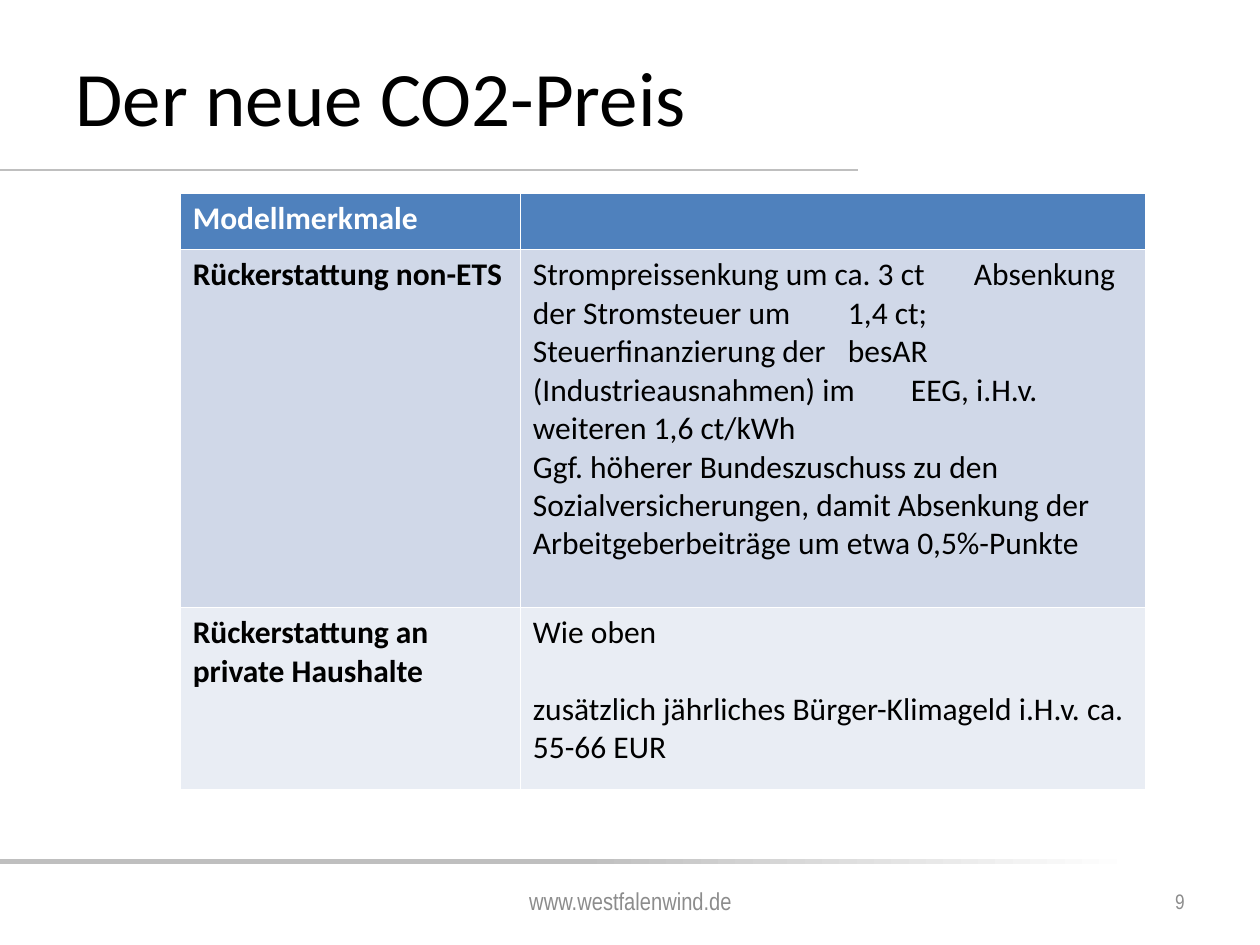
import pptx
import pptx.util
import pptx.dml.color
import pptx.enum.shapes
import pptx.enum.text
import lxml.etree

Inches, Pt = pptx.util.Inches, pptx.util.Pt
RGBColor = pptx.dml.color.RGBColor
ALIGN = pptx.enum.text.PP_ALIGN
ANCHOR = pptx.enum.text.MSO_ANCHOR

BLACK = RGBColor(0x00, 0x00, 0x00)
WHITE = RGBColor(0xFF, 0xFF, 0xFF)
RULE_GREY = RGBColor(0xBF, 0xBF, 0xBF)
FOOTER_GREY = RGBColor(0x8C, 0x8C, 0x8C)
HEADER_BLUE = RGBColor(0x4F, 0x81, 0xBD)
BAND_DARK = RGBColor(0xD0, 0xD8, 0xE8)
BAND_LIGHT = RGBColor(0xE9, 0xED, 0xF4)

ROW_HEIGHTS = [0.45, 2.84, 1.45]
COLUMN_WIDTHS = [2.7, 4.96]
ROW_FILLS = [HEADER_BLUE, BAND_DARK, BAND_LIGHT]
MODEL_ROWS = [
    ["Modellmerkmale", ""],
    ["Rückerstattung non-ETS",
     "Strompreissenkung um ca. 3 ct \tAbsenkung der Stromsteuer um \t1,4 ct; "
     "Steuerfinanzierung der \tbesAR (Industrieausnahmen) im \tEEG, i.H.v. "
     "weiteren 1,6 ct/kWh\n"
     "Ggf. höherer Bundeszuschuss zu den Sozialversicherungen, damit "
     "Absenkung der Arbeitgeberbeiträge um etwa 0,5%-Punkte"],
    ["Rückerstattung an private Haushalte",
     "Wie oben\nzusätzlich jährliches Bürger-Klimageld i.H.v. ca. 55-66 EUR"],
]


def format_text(text_frame, size, font_name, color, bold=False, align=ALIGN.LEFT):
    for paragraph in text_frame.paragraphs:
        paragraph.alignment = align
        for run in paragraph.runs:
            run.font.size = Pt(size)
            run.font.name = font_name
            run.font.color.rgb = color
            run.font.bold = bold


def add_heading(slide, left, top, width, height):
    # Title
    title = slide.shapes.title
    title.left, title.top = Inches(left), Inches(top)
    title.width, title.height = Inches(width), Inches(height)
    frame = title.text_frame
    frame.text = "Der neue CO2-Preis"
    frame.vertical_anchor = ANCHOR.TOP
    frame.margin_top = Inches(0.09)
    format_text(frame, 44, "Calibri", BLACK)

    # Rule under the title
    rule_y = Inches(top + 1.05)
    rule = slide.shapes.add_connector(
        pptx.enum.shapes.MSO_CONNECTOR.STRAIGHT, 0, rule_y, Inches(6.81), rule_y)
    rule.line.color.rgb = RULE_GREY
    rule.line.width = Pt(1.5)
    lxml.etree.SubElement(rule.element.spPr, pptx.oxml.ns.qn("a:effectLst"))


def add_model_table(slide, left, top):
    table = slide.shapes.add_table(
        len(ROW_HEIGHTS), len(COLUMN_WIDTHS), Inches(left), Inches(top),
        Inches(sum(COLUMN_WIDTHS)), Inches(sum(ROW_HEIGHTS))).table
    for column, width in zip(table.columns, COLUMN_WIDTHS):
        column.width = Inches(width)
    for r, (height, row_fill) in enumerate(zip(ROW_HEIGHTS, ROW_FILLS)):
        table.rows[r].height = Inches(height)
        for c, wording in enumerate(MODEL_ROWS[r]):
            cell = table.cell(r, c)
            cell.fill.solid()
            cell.fill.fore_color.rgb = row_fill
            cell.text_frame.text = wording
            format_text(cell.text_frame, 18, "Calibri",
                        WHITE if r == 0 else BLACK, bold=c == 0)
    # Gap of one line before the climate payment
    table.cell(2, 1).text_frame.paragraphs[1].space_before = Pt(22)


def add_footer_text(slide, left, top, width, height, wording, size, align):
    frame = slide.shapes.add_textbox(
        Inches(left), Inches(top), Inches(width), Inches(height)).text_frame
    frame.word_wrap = True
    frame.vertical_anchor = ANCHOR.MIDDLE
    frame.text = wording
    format_text(frame, size, "Arial Narrow", FOOTER_GREY, align=align)


def add_footer(slide, top, width):
    # Fading bar
    bar = slide.shapes.add_shape(
        pptx.enum.shapes.MSO_SHAPE.RECTANGLE,
        0, Inches(top), Inches(width), Inches(0.04))
    bar.shadow.inherit = False
    bar.line.fill.background()
    bar.fill.gradient()
    bar.fill.gradient_angle = 0
    for stop, color, position in zip(
            bar.fill.gradient_stops, (RULE_GREY, WHITE), (0.46, 0.9)):
        stop.color.rgb = color
        stop.position = position

    # Web address and page number
    text_top = top + 0.13
    add_footer_text(slide, 3.42, text_top, 3.17, 0.4,
                    "www.westfalenwind.de", 14, ALIGN.CENTER)
    add_footer_text(slide, 7.17, text_top, 2.33, 0.4, "9", 12, ALIGN.RIGHT)


def main():
    deck = pptx.Presentation()
    deck.slide_width, deck.slide_height = Inches(10), Inches(7.5)
    slide = deck.slides.add_slide(deck.slide_layouts.get_by_name("Title Only"))
    add_heading(slide, 0.5, 0.3, 9, 1.25)
    add_model_table(slide, 1.43, 1.53)
    add_footer(slide, 6.82, 10)
    deck.save("out.pptx")


if __name__ == "__main__":
    main()
